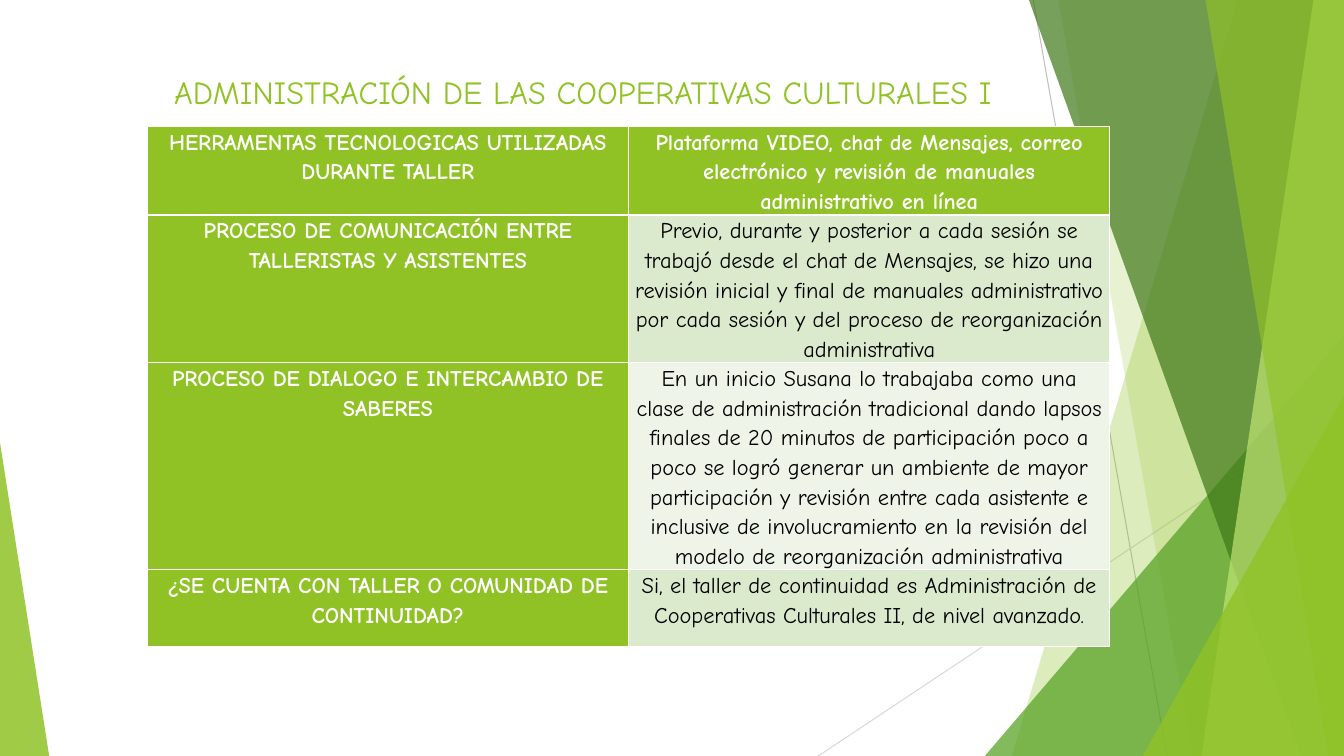
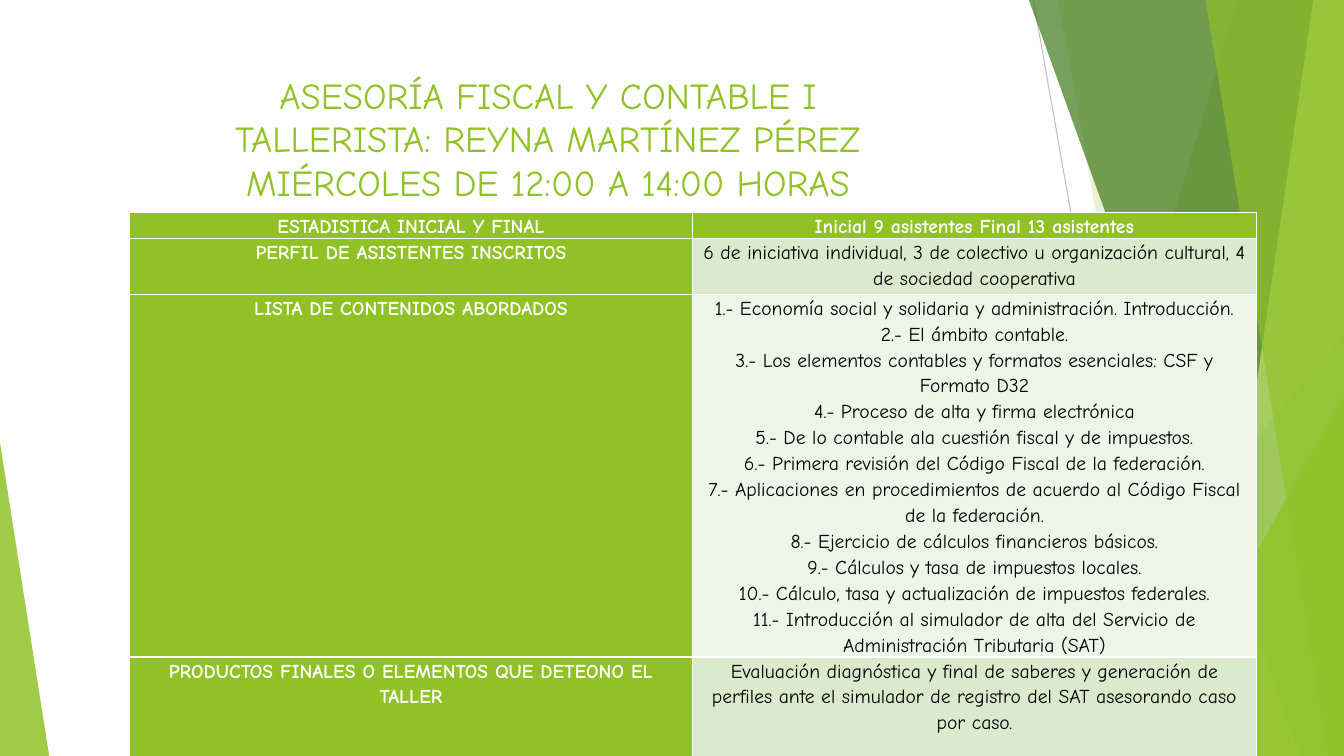
from lxml.etree import SubElement
from pptx import Presentation
from pptx.dml.color import RGBColor
from pptx.enum.shapes import MSO_CONNECTOR as Connector, MSO_SHAPE as Preset
from pptx.enum.text import MSO_ANCHOR as Anchor, MSO_AUTO_SIZE as AutoSize, PP_ALIGN as Align
from pptx.oxml.ns import qn
from pptx.util import Cm, Pt

COLORS = {
    "lime": "90C226", "green": "54A021", "forest": "3F7819", "pale": "C0E474",
    "gray": "BFBFBF", "silver": "D9D9D9", "white": "FFFFFF", "black": "000000",
    "band_dark": "DBE9CD", "band_light": "EEF4E8",
}
FONT = "Comic Neue"
WIDTH, HEIGHT = 33.87, 19.05

# Background lines: start x, start y, end x, end y, colour
LINES = [
    (26.04, 0, 29.41, HEIGHT, "gray"),
    (WIDTH, 10.24, 20.62, HEIGHT, "silver"),
]
# Background shapes from back to front, with colour and opacity in percent.
# A band gives the x of its left edge at top and bottom, and runs to the right side;
# a triangle gives left, top, width and apex position, and stands on the bottom.
FACETS = [
    ("band", (31.19, 25.5), "lime", 30),
    ("band", (26.67, 30.05), "lime", 20),
    ("triangle", (24.82, 8.46, 9.05, 1), "green", 72),
    ("band", (25.93, 32.79), "forest", 70),
    ("band", (33.1, 30.28), "pale", 70),
    ("band", (30.38, 33.48), "lime", 65),
    ("triangle", (28.8, 9.98, 5.07, 1), "lime", 80),
    ("triangle", (0, 11.15, 1.24, 0), "lime", 85),
]
SLIDES = [
    {
        "title": "ADMINISTRACIÓN DE LAS COOPERATIVAS CULTURALES I",
        "title_width": 25.65, "title_size": 23,
        "left": 3.71, "top": 3.18, "column": 12.13, "size": 16, "inset": 0.15,
        "heights": [1.93, 3.23, 5.18, 1.93],
        "rows": [
            ("HERRAMENTAS TECNOLOGICAS UTILIZADAS DURANTE TALLER",
             "Plataforma VIDEO, chat de Mensajes, correo electrónico y revisión de manuales "
             "administrativo en línea"),
            ("PROCESO DE COMUNICACIÓN ENTRE TALLERISTAS Y ASISTENTES",
             "Previo, durante y posterior a cada sesión se trabajó desde el chat de Mensajes, "
             "se hizo una revisión inicial y final de manuales administrativo por cada sesión "
             "y del proceso de reorganización administrativa"),
            ("PROCESO DE DIALOGO E INTERCAMBIO DE SABERES",
             "En un inicio Susana lo trabajaba como una clase de administración tradicional "
             "dando lapsos finales de 20 minutos de participación poco a poco se logró generar "
             "un ambiente de mayor participación y revisión entre cada asistente e inclusive "
             "de involucramiento en la revisión del modelo de reorganización administrativa"),
            ("¿SE CUENTA CON TALLER O COMUNIDAD DE CONTINUIDAD?",
             "Si, el taller de continuidad es Administración de Cooperativas Culturales II, "
             "de nivel avanzado."),
        ],
    },
    {
        "title": "ASESORÍA FISCAL Y CONTABLE I\vTALLERISTA: REYNA MARTÍNEZ PÉREZ\v"
                 "MIÉRCOLES DE 12:00 A 14:00 HORAS",
        "title_width": 23.88, "title_size": 26.1,
        "left": 3.26, "top": 5.36, "column": 14.2, "size": 14, "inset": 0.13,
        "heights": [0.48, 1.4, 8.79, 2.77],
        "rows": [
            ("ESTADISTICA INICIAL Y FINAL", "Inicial 9 asistentes Final 13 asistentes"),
            ("PERFIL DE ASISTENTES INSCRITOS",
             "6 de iniciativa individual, 3 de colectivo u organización cultural, "
             "4 de sociedad cooperativa"),
            ("LISTA DE CONTENIDOS ABORDADOS", "\n".join([
                "1.- Economía social y solidaria y administración. Introducción.",
                "2.- El ámbito contable.",
                "3.- Los elementos contables y formatos esenciales: CSF y Formato D32",
                "4.- Proceso de alta y firma electrónica",
                "5.- De lo contable ala cuestión fiscal y de impuestos.",
                "6.- Primera revisión del Código Fiscal de la federación.",
                "7.- Aplicaciones en procedimientos de acuerdo al Código Fiscal de la federación.",
                "8.- Ejercicio de cálculos financieros básicos.",
                "9.- Cálculos y tasa de impuestos locales.",
                "10.- Cálculo, tasa y actualización de impuestos federales.",
                "11.- Introducción al simulador de alta del Servicio de Administración "
                "Tributaria (SAT)",
            ])),
            ("PRODUCTOS FINALES O ELEMENTOS QUE DETEONO EL TALLER",
             "Evaluación diagnóstica y final de saberes y generación de perfiles ante el "
             "simulador de registro del SAT asesorando caso por caso."),
        ],
    },
]


def paint(fill, color):
    """Make a fill solid, in a named colour."""
    fill.solid()
    fill.fore_color.rgb = RGBColor.from_string(COLORS[color])


def format_text(text_frame, color, line_spacing, **font_values):
    for paragraph in text_frame.paragraphs:
        paragraph.alignment = Align.CENTER
        paragraph.line_spacing = line_spacing
        for run in paragraph.runs:
            run.font.color.rgb = RGBColor.from_string(COLORS[color])
            for name, value in font_values.items():
                setattr(run.font, name, value)


presentation = Presentation()
presentation.slide_width, presentation.slide_height = Cm(WIDTH), Cm(HEIGHT)
layout = presentation.slide_layouts.get_by_name("Title Only")
slides = [presentation.slides.add_slide(layout) for _ in SLIDES]

# The background is drawn on the first slide, then moved to the layout both slides use
shapes = slides[0].shapes
background = []
for start_x, start_y, end_x, end_y, color in LINES:
    line = shapes.add_connector(
        Connector.STRAIGHT, Cm(start_x), Cm(start_y), Cm(end_x), Cm(end_y))
    line.line.width = Pt(0.75)
    line.line.color.rgb = RGBColor.from_string(COLORS[color])
    SubElement(line.element.spPr, qn("a:effectLst"))
    background.append(line)

for kind, place, color, opacity in FACETS:
    if kind == "band":
        top_x, bottom_x = place
        outline = shapes.build_freeform(Cm(top_x), 0)
        outline.add_line_segments(
            [(Cm(WIDTH), 0), (Cm(WIDTH), Cm(HEIGHT)), (Cm(bottom_x), Cm(HEIGHT))])
        facet = outline.convert_to_shape()
    else:
        left, top, width, apex = place
        facet = shapes.add_shape(
            Preset.ISOSCELES_TRIANGLE, Cm(left), Cm(top), Cm(width), Cm(HEIGHT - top))
        facet.adjustments[0] = apex
    paint(facet.fill, color)
    facet.line.fill.background()
    facet.shadow.inherit = False
    fill_color = facet.element.spPr.find(qn("a:solidFill"))[0]
    SubElement(fill_color, qn("a:alpha"), val=str(opacity * 1000))
    background.append(facet)

for shape in background:
    layout.shapes.element.append(shape.element)

for slide, content in zip(slides, SLIDES):
    title = slide.shapes.title
    title.left, title.top = Cm(1.88), Cm(1.7)
    title.width, title.height = Cm(content["title_width"]), Cm(3.66)
    title.text_frame.text = content["title"]
    title.text_frame.auto_size = AutoSize.NONE
    title.text_frame.vertical_anchor = Anchor.TOP
    format_text(title.text_frame, "lime", 1, name=FONT, size=Pt(content["title_size"]))

    rows, heights = content["rows"], content["heights"]
    table = slide.shapes.add_table(
        len(rows), 2, Cm(content["left"]), Cm(content["top"]),
        Cm(2 * content["column"]), Cm(sum(heights))).table
    for row_index, (texts, height) in enumerate(zip(rows, heights)):
        table.rows[row_index].height = Cm(height)
        for column_index, text in enumerate(texts):
            cell = table.cell(row_index, column_index)
            heading = row_index == 0 or column_index == 0
            band = "band_dark" if row_index % 2 else "band_light"
            paint(cell.fill, "lime" if heading else band)
            cell.margin_left = cell.margin_right = Cm(content["inset"])
            cell.margin_top = cell.margin_bottom = 0
            cell.text = text
            format_text(cell.text_frame, "white" if heading else "black", 1.15,
                        name=FONT, size=Pt(content["size"]), bold=heading)

presentation.save("out.pptx")
